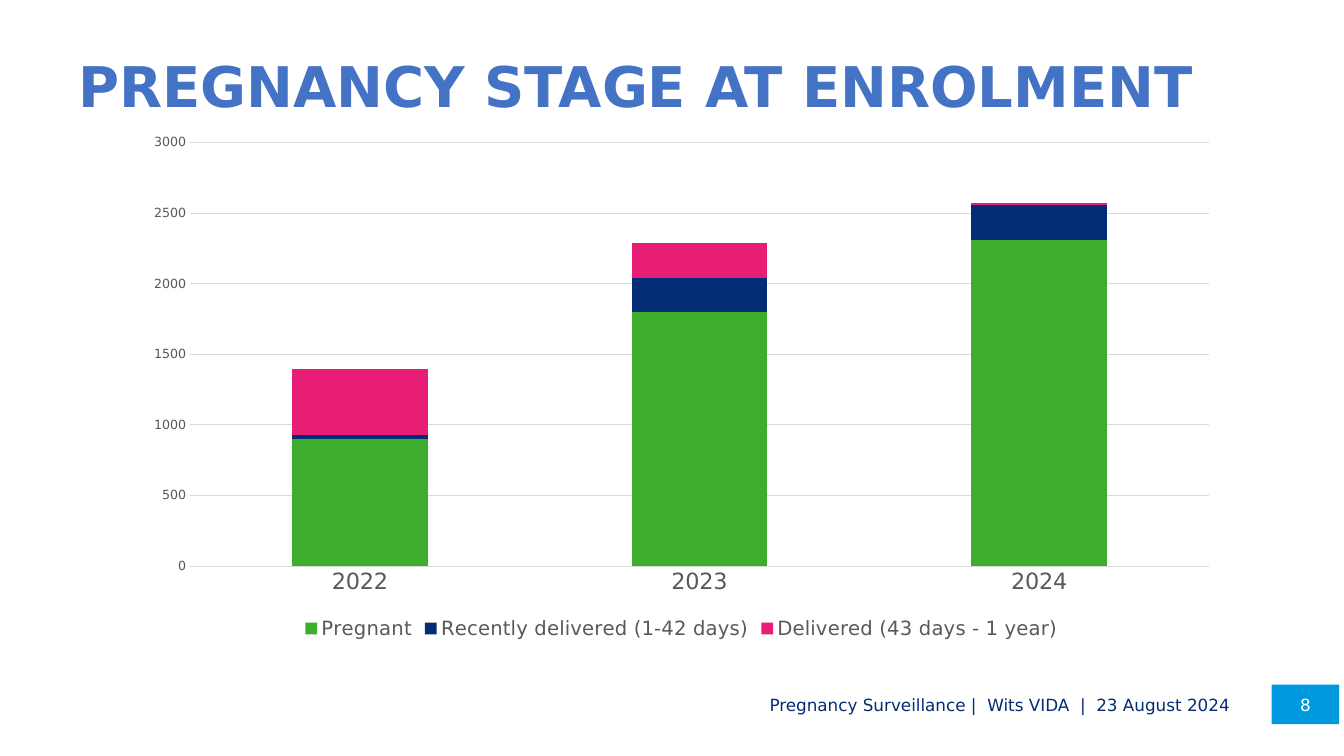
from dataclasses import dataclass

import pptx
import pptx.chart.data
import pptx.dml.color
import pptx.enum.chart
import pptx.enum.shapes
import pptx.enum.text
import pptx.util
from pptx.util import Cm


@dataclass(frozen=True)
class Theme:
    font: str = "DejaVu Sans"
    title: str = "4472C4"
    navy: str = "032C74"
    green: str = "3CAE2B"
    pink: str = "E81E76"
    badge: str = "0098DE"
    white: str = "FFFFFF"
    label: str = "595959"
    grid: str = "D9D9D9"
    title_size: int = 40
    category_size: int = 16
    legend_size: int = 14
    footer_size: int = 12
    value_size: int = 9


def rgb(colour):
    return pptx.dml.color.RGBColor.from_string(colour)


class SlideBuilder:
    def __init__(self, presentation, theme):
        self.theme = theme
        self.slide = presentation.slides.add_slide(presentation.slide_layouts[5])
        self.slide.background.fill.solid()
        self.slide.background.fill.fore_color.rgb = rgb(theme.white)

    def style_font(self, font, size, colour, bold=False):
        font.name = self.theme.font
        font.size = pptx.util.Pt(size)
        font.color.rgb = rgb(colour)
        font.bold = bold

    def style_line(self, line):
        line.color.rgb = rgb(self.theme.grid)
        line.width = pptx.util.Pt(0.75)

    def set_text(self, shape, text, size, colour, alignment, anchor, bold=False):
        """Fill a shape with one styled paragraph, without margins."""
        frame = shape.text_frame
        frame.word_wrap = True
        frame.auto_size = pptx.enum.text.MSO_AUTO_SIZE.NONE
        frame.vertical_anchor = anchor
        frame.margin_left = frame.margin_right = 0
        frame.margin_top = frame.margin_bottom = 0
        paragraph = frame.paragraphs[0]
        paragraph.alignment = alignment
        run = paragraph.add_run()
        run.text = text
        self.style_font(run.font, size, colour, bold)
        return paragraph

    def title(self, text, left, top, width, height):
        shape = self.slide.shapes.title
        shape.left, shape.top, shape.width, shape.height = left, top, width, height
        paragraph = self.set_text(shape, text, self.theme.title_size, self.theme.title,
                                  pptx.enum.text.PP_ALIGN.LEFT,
                                  pptx.enum.text.MSO_ANCHOR.TOP, bold=True)
        paragraph.line_spacing = 0.9

    def footer(self, text, left, top, width, height):
        shape = self.slide.shapes.add_textbox(left, top, width, height)
        self.set_text(shape, text, self.theme.footer_size, self.theme.navy,
                      pptx.enum.text.PP_ALIGN.RIGHT, pptx.enum.text.MSO_ANCHOR.MIDDLE)

    def page_badge(self, text, left, top, width, height):
        shape = self.slide.shapes.add_shape(
            pptx.enum.shapes.MSO_SHAPE.RECTANGLE, left, top, width, height)
        shape.shadow.inherit = False
        shape.fill.solid()
        shape.fill.fore_color.rgb = rgb(self.theme.badge)
        shape.line.fill.background()
        self.set_text(shape, text, self.theme.footer_size, self.theme.white,
                      pptx.enum.text.PP_ALIGN.CENTER, pptx.enum.text.MSO_ANCHOR.MIDDLE)

    def stacked_columns(self, categories, series, left, top, width, height):
        """Draw a stacked column chart from (name, values, colour) series."""
        data = pptx.chart.data.CategoryChartData()
        data.categories = categories
        for name, values, _ in series:
            data.add_series(name, values)
        chart = self.slide.shapes.add_chart(
            pptx.enum.chart.XL_CHART_TYPE.COLUMN_STACKED,
            left, top, width, height, data).chart
        chart.has_title = False
        self.style_font(chart.font, self.theme.value_size, self.theme.label)

        plot = chart.plots[0]
        plot.gap_width = 150
        plot.overlap = 100
        plot.vary_by_categories = False
        for column, (_, _, colour) in zip(plot.series, series):
            column.format.fill.solid()
            column.format.fill.fore_color.rgb = rgb(colour)

        for axis, size in ((chart.category_axis, self.theme.category_size),
                           (chart.value_axis, self.theme.value_size)):
            axis.major_tick_mark = pptx.enum.chart.XL_TICK_MARK.NONE
            axis.minor_tick_mark = pptx.enum.chart.XL_TICK_MARK.NONE
            self.style_font(axis.tick_labels.font, size, self.theme.label)
        self.style_line(chart.category_axis.format.line)
        value_axis = chart.value_axis
        value_axis.minimum_scale, value_axis.maximum_scale = 0, 3000
        value_axis.major_unit = 500
        value_axis.format.line.fill.background()
        value_axis.has_major_gridlines = True
        self.style_line(value_axis.major_gridlines.format.line)

        chart.has_legend = True
        chart.legend.position = pptx.enum.chart.XL_LEGEND_POSITION.BOTTOM
        chart.legend.include_in_layout = False
        self.style_font(chart.legend.font, self.theme.legend_size, self.theme.label)


def main():
    presentation = pptx.Presentation()
    presentation.slide_width, presentation.slide_height = Cm(33.87), Cm(19.05)
    theme = Theme()
    builder = SlideBuilder(presentation, theme)
    builder.title("PREGNANCY STAGE AT ENROLMENT", Cm(1.98), Cm(1.5), Cm(28.6), Cm(1.14))
    footer_top, footer_height = Cm(17.25), Cm(1)
    builder.footer("Pregnancy Surveillance |  Wits VIDA  |  23 August 2024",
                   Cm(16.94), footer_top, Cm(14.07), footer_height)
    builder.page_badge("8", Cm(32.05), footer_top, Cm(1.7), footer_height)
    builder.stacked_columns(
        ["2022", "2023", "2024"],
        [("Pregnant", (900, 1800, 2310), theme.green),
         ("Recently delivered (1-42 days)", (30, 240, 250), theme.navy),
         ("Delivered (43 days - 1 year)", (470, 250, 10), theme.pink)],
        Cm(3.33), Cm(3.15), Cm(27.69), Cm(13.08))
    presentation.save("out.pptx")


if __name__ == "__main__":
    main()
